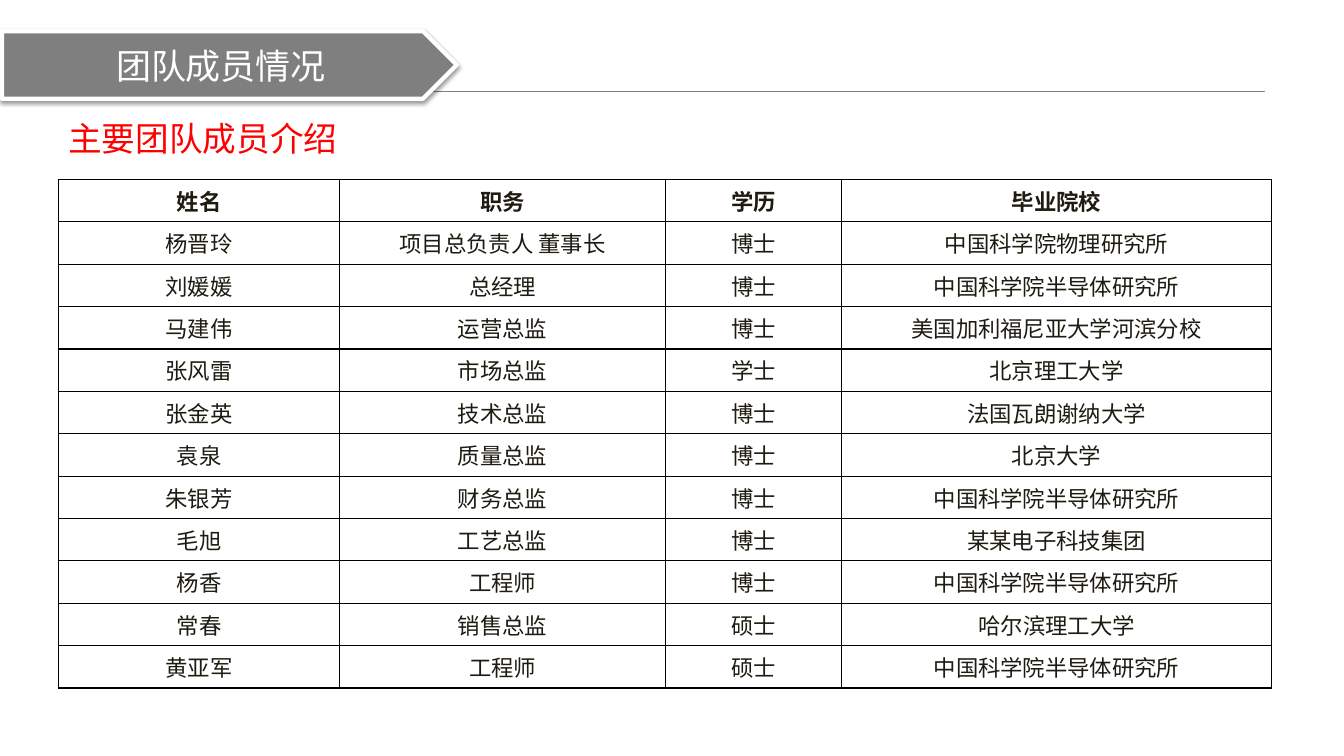
import pptx
import pptx.dml.color
import pptx.enum.lang
import pptx.enum.shapes
import pptx.enum.text
import pptx.oxml
import pptx.oxml.ns
import pptx.util

Inches = pptx.util.Inches
Pt = pptx.util.Pt
Align = pptx.enum.text.PP_ALIGN
Anchor = pptx.enum.text.MSO_ANCHOR
NS = pptx.oxml.ns.nsdecls("a")

HEADS = ("姓名", "职务", "学历", "毕业院校")
TEAM = (
    ("杨晋玲", "项目总负责人 董事长", "博士", "中国科学院物理研究所"),
    ("刘媛媛", "总经理", "博士", "中国科学院半导体研究所"),
    ("马建伟", "运营总监", "博士", "美国加利福尼亚大学河滨分校"),
    ("张风雷", "市场总监", "学士", "北京理工大学"),
    ("张金英", "技术总监", "博士", "法国瓦朗谢纳大学"),
    ("袁泉", "质量总监", "博士", "北京大学"),
    ("朱银芳", "财务总监", "博士", "中国科学院半导体研究所"),
    ("毛旭", "工艺总监", "博士", "某某电子科技集团"),
    ("杨香", "工程师", "博士", "中国科学院半导体研究所"),
    ("常春", "销售总监", "硕士", "哈尔滨理工大学"),
    ("黄亚军", "工程师", "硕士", "中国科学院半导体研究所"),
)
WIDTHS = (2.79, 3.23, 1.75, 4.26)


def color(code):
    return pptx.dml.color.RGBColor.from_string(code)


def write(frame, text, size=16, font="Times New Roman", ink="1E1C11",
          bold=False, align=Align.CENTER):
    line = frame.paragraphs[0]
    line.alignment = align
    run = line.add_run()
    run.text = text
    run.font.size = Pt(size)
    run.font.name = font
    run.font.bold = bold
    run.font.color.rgb = color(ink)
    run.font.language_id = pptx.enum.lang.MSO_LANGUAGE_ID.SIMPLIFIED_CHINESE


def add_rule(slide, left, top, width):
    rule = slide.shapes.add_connector(
        pptx.enum.shapes.MSO_CONNECTOR.STRAIGHT,
        Inches(left), Inches(top), Inches(left + width), Inches(top))
    rule.line.color.rgb = color("808080")
    rule.line.width = Pt(0.75)
    rule._element.spPr.append(pptx.oxml.parse_xml(f"<a:effectLst {NS}/>"))


def add_banner(slide, left, top, width, height):
    flag = slide.shapes.add_shape(
        pptx.enum.shapes.MSO_SHAPE.PENTAGON,
        Inches(left), Inches(top), Inches(width), Inches(height))
    flag.fill.solid()
    flag.fill.fore_color.rgb = color("7F7F7F")
    flag.line.color.rgb = color("FFFFFF")
    flag.line.width = Pt(3)
    flag._element.spPr.append(pptx.oxml.parse_xml(
        f'<a:effectLst {NS}><a:outerShdw blurRad="{Pt(3.1)}" dist="{Pt(1.6)}" '
        'dir="5400000" rotWithShape="0"><a:srgbClr val="000000">'
        '<a:alpha val="38000"/></a:srgbClr></a:outerShdw></a:effectLst>'))

    title = slide.shapes.title
    title.left, title.top = Inches(left), Inches(top)
    title.width, title.height = Inches(width - height / 4), Inches(height)
    frame = title.text_frame
    frame.auto_size = pptx.enum.text.MSO_AUTO_SIZE.NONE
    frame.vertical_anchor = Anchor.MIDDLE
    write(frame, "团队成员情况", size=25, font="Noto Sans CJK SC", ink="FFFFFF")
    slide.shapes._spTree.append(title._element)


def add_heading(slide, left, top, width, height):
    box = slide.shapes.add_textbox(
        Inches(left), Inches(top), Inches(width), Inches(height))
    box.text_frame.word_wrap = False
    write(box.text_frame, "主要团队成员介绍", size=24, ink="FF0000", align=Align.LEFT)


def set_cell(cell, text, bold):
    cell.margin_left = cell.margin_right = Inches(0.13)
    cell.margin_top = cell.margin_bottom = Inches(0.05)
    cell.vertical_anchor = Anchor.MIDDLE
    props = cell._tc.get_or_add_tcPr()
    for side in "LRTB":
        props.append(pptx.oxml.parse_xml(
            f'<a:ln{side} {NS} w="{Pt(1)}"><a:solidFill>'
            f'<a:srgbClr val="000000"/></a:solidFill></a:ln{side}>'))
    cell.fill.solid()
    cell.fill.fore_color.rgb = color("FFFFFF")
    write(cell.text_frame, text, bold=bold)


def add_team(slide, left, top, width, height):
    rows = (HEADS,) + TEAM
    table = slide.shapes.add_table(
        len(rows), len(HEADS), Inches(left), Inches(top),
        Inches(width), Inches(height)).table
    table.horz_banding = False
    for column, share in zip(table.columns, WIDTHS):
        column.width = Inches(width * share / sum(WIDTHS))
    for r, row in enumerate(rows):
        table.rows[r].height = Inches(height / len(rows))
        for c, text in enumerate(row):
            set_cell(table.cell(r, c), text, bold=r == 0)


def main():
    deck = pptx.Presentation()
    deck.slide_width, deck.slide_height = Inches(13.33), Inches(7.5)
    slide = deck.slides.add_slide(deck.slide_layouts[5])
    add_rule(slide, 1.1, 0.91, 11.45)
    add_team(slide, 0.58, 1.78, 12.03, 4.8)
    add_heading(slide, 0.58, 1.12, 2.89, 0.5)
    add_banner(slide, 0.02, 0.31, 4.51, 0.67)
    deck.save("out.pptx")


if __name__ == "__main__":
    main()
